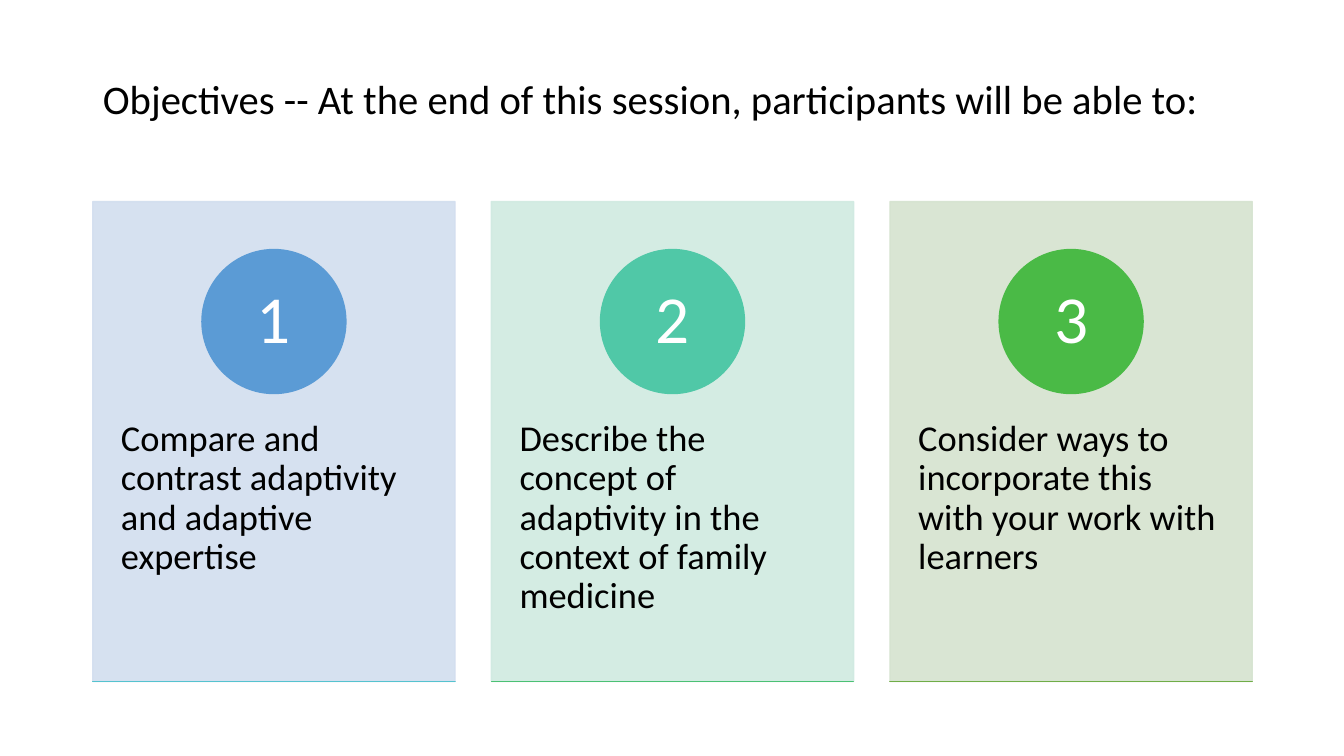
from lxml import etree
from pptx import Presentation
from pptx.dml.color import RGBColor
from pptx.enum.shapes import MSO_SHAPE
from pptx.enum.text import MSO_ANCHOR, MSO_AUTO_SIZE, PP_ALIGN
from pptx.oxml.ns import qn
from pptx.util import Inches, Pt

RECTANGLE = MSO_SHAPE.RECTANGLE
OVAL = MSO_SHAPE.OVAL
MIDDLE = MSO_ANCHOR.MIDDLE
TOP = MSO_ANCHOR.TOP
LEFT = PP_ALIGN.LEFT
CENTER = PP_ALIGN.CENTER
NO_AUTOFIT = MSO_AUTO_SIZE.NONE

SLIDE_WIDTH, SLIDE_HEIGHT = 13.33, 7.5
MARGIN = 0.92
CONTENT_WIDTH = 11.5
TITLE_TOP, TITLE_HEIGHT = 0.61, 1.24
CARDS_TOP, CARDS_HEIGHT = 2, 4.76
CARD_GAP = 0.36

TITLE = "Objectives -- At the end of this session, participants will be able to:"
OBJECTIVES = [
    ("Compare and contrast adaptivity and adaptive expertise", "D2DEEF", "5B9BD5", "55C3CF"),
    ("Describe the concept of adaptivity in the context of family medicine", "D0EAE1", "50C8A7", "4BC174"),
    ("Consider ways to incorporate this with your work with learners", "D5E3CF", "4ABA46", "70AD47"),
]


def set_color(color_format, hex_color, opacity=100):
    color_format.rgb = RGBColor.from_string(hex_color)


def set_opacity(parent, percent):
    for color in parent.iter(qn("a:srgbClr")):
        etree.SubElement(color, qn("a:alpha")).set("val", str(percent * 1000))


def place(shape, box):
    shape.left, shape.top, shape.width, shape.height = map(Inches, box)


def write(shape, text, size, color, alignment, anchor, margins):
    frame = shape.text_frame
    frame.text = text
    frame.word_wrap = True
    frame.auto_size = NO_AUTOFIT
    frame.vertical_anchor = anchor
    frame.margin_left, frame.margin_top, frame.margin_right, frame.margin_bottom = map(Inches, margins)
    paragraph = frame.paragraphs[0]
    paragraph.alignment = alignment
    paragraph.line_spacing = 0.9
    font = paragraph.runs[0].font
    font.name = "Calibri"
    font.size = Pt(size)
    set_color(font.color, color)


def add_filled_shape(slide, kind, box, color):
    shape = slide.shapes.add_shape(kind, *map(Inches, box))
    shape.shadow.inherit = False
    shape.fill.solid()
    set_color(shape.fill.fore_color, color)
    set_color(shape.line.color, color)
    shape.line.width = Pt(1)
    return shape


def add_title(slide, box):
    title = slide.shapes.title
    place(title, box)
    write(title, TITLE, 29, "000000", LEFT, MIDDLE, (0.1, 0.05, 0.1, 0.49))


def add_card(slide, box, number, objective):
    text, panel_color, circle_color, base_color = objective
    left, top, width, height = box
    panel = add_filled_shape(slide, RECTANGLE, box, panel_color)
    set_opacity(panel.fill._xPr, 90)

    description = slide.shapes.add_textbox(
        *map(Inches, (left, top + 0.38 * height, width, 0.6 * height)))
    write(description, text, 26, "000000", LEFT, TOP, (0.28, 0.36, 0.28, 0.36))

    diameter = 0.3 * height
    circle = add_filled_shape(
        slide, OVAL,
        (left + (width - diameter) / 2, top + 0.1 * height, diameter, diameter),
        circle_color)
    write(circle, str(number), 48, "FFFFFF", CENTER, MIDDLE, (0.11, 0.01, 0.11, 0.01))

    add_filled_shape(slide, RECTANGLE, (left, top + height, width, 0), base_color)


def add_cards(slide, box):
    left, top, width, height = box
    count = len(OBJECTIVES)
    card_width = (width - CARD_GAP * (count - 1)) / count
    for index, objective in enumerate(OBJECTIVES):
        card_left = left + index * (card_width + CARD_GAP)
        add_card(slide, (card_left, top, card_width, height), index + 1, objective)


def main():
    presentation = Presentation()
    presentation.slide_width = Inches(SLIDE_WIDTH)
    presentation.slide_height = Inches(SLIDE_HEIGHT)
    slide = presentation.slides.add_slide(presentation.slide_layouts[5])
    add_title(slide, (MARGIN, TITLE_TOP, CONTENT_WIDTH, TITLE_HEIGHT))
    add_cards(slide, (MARGIN, CARDS_TOP, CONTENT_WIDTH, CARDS_HEIGHT))
    presentation.save("out.pptx")


if __name__ == "__main__":
    main()
